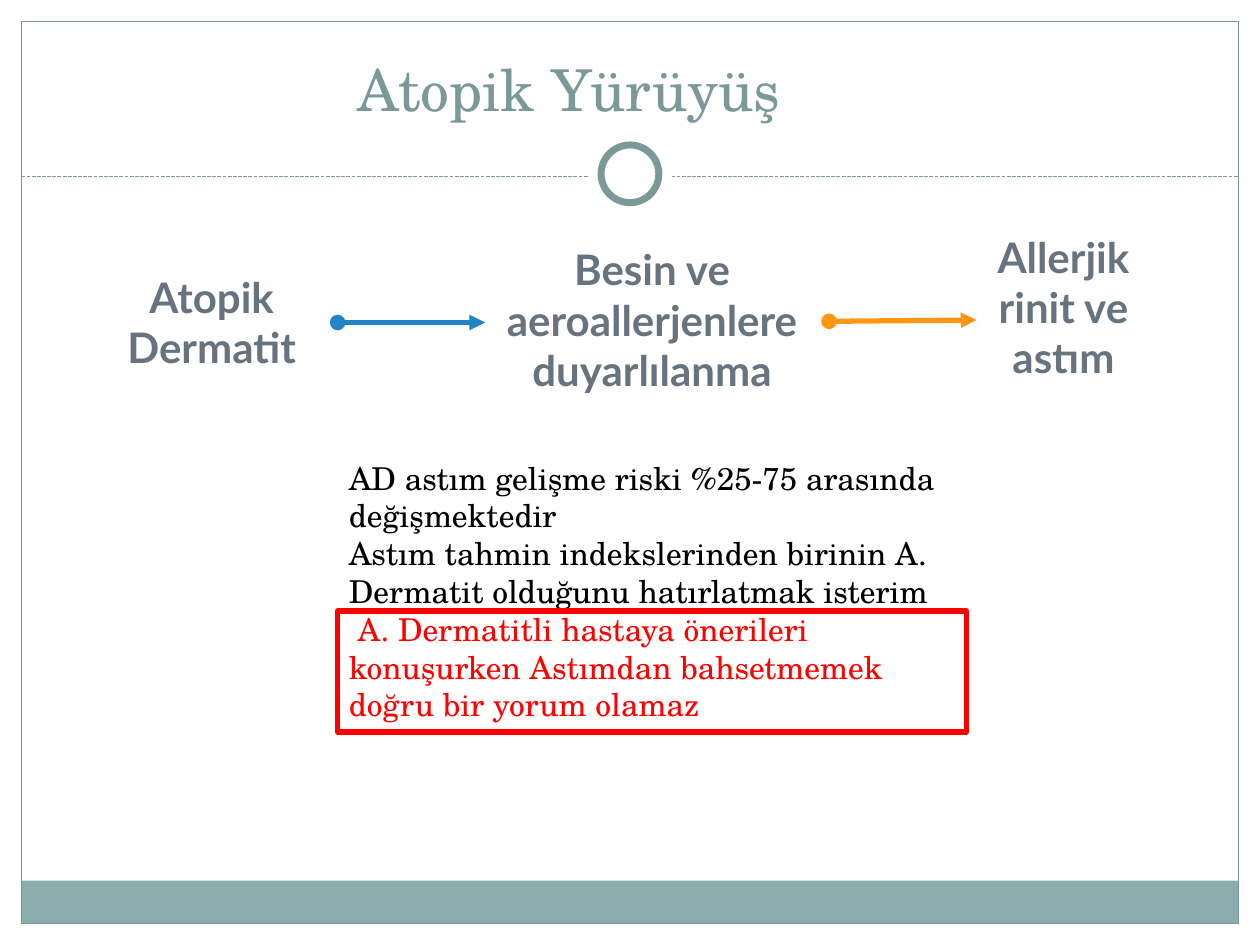
"""Build the Atopik Yürüyüş slide."""
from lxml import etree
from pptx import Presentation
from pptx.dml.color import RGBColor
from pptx.enum.dml import MSO_LINE
from pptx.enum.shapes import MSO_CONNECTOR, MSO_SHAPE
from pptx.enum.text import MSO_ANCHOR, PP_ALIGN
from pptx.oxml.ns import qn
from pptx.util import Pt

RECT, OVAL = MSO_SHAPE.RECTANGLE, MSO_SHAPE.OVAL
STRAIGHT, DASH = MSO_CONNECTOR.STRAIGHT, MSO_LINE.SQUARE_DOT
TOP, MIDDLE, BOTTOM = MSO_ANCHOR.TOP, MSO_ANCHOR.MIDDLE, MSO_ANCHOR.BOTTOM
LEFT, CENTER = PP_ALIGN.LEFT, PP_ALIGN.CENTER

SERIF, SANS = "TeX Gyre Schola", "Lato"
COLORS = {"teal": "7C999A", "band": "8CADAE", "white": "FFFFFF", "slate": "677480",
          "blue": "2185C5", "orange": "FF9715", "black": "000000", "red": "FF0000"}

WIDTH, HEIGHT = 720, 540
MARGIN = 12.24
RULE_Y = 100.8
RING_Y = 99.36

TITLE = "Atopik Yürüyüş"
STAGES = [
    ("Atopik Dermatit", (59.76, 159.12, 122.4, 49.68)),
    ("Besin ve aeroallerjenlere duyarlılanma", (275.04, 157.68, 195.12, 49.68)),
    ("Allerjik rinit ve astım", (556.56, 151.2, 102.24, 48.24)),
]
ARROWS = [
    ("blue", (192.96, 184.32, 277.2, 184.32)),
    ("orange", (473.76, 183.6, 558, 182.88)),
]
NOTES = [
    ("AD astım gelişme riski %25-75 arasında değişmektedir", "black"),
    ("Astım tahmin indekslerinden birinin A. Dermatit olduğunu hatırlatmak isterim", "black"),
    (" A. Dermatitli hastaya önerileri konuşurken Astımdan bahsetmemek doğru bir yorum olamaz", "red"),
]


def rgb(name):
    return RGBColor.from_string(COLORS[name])


def add_shape(s, kind, box, fill=None, line=None, weight=0.75):
    sp = s.shapes.add_shape(kind, *map(Pt, box))
    sp.shadow.inherit = False
    if fill:
        sp.fill.solid()
        sp.fill.fore_color.rgb = rgb(fill)
    else:
        sp.fill.background()
    if line:
        sp.line.color.rgb = rgb(line)
        sp.line.width = Pt(weight)
    else:
        sp.line.fill.background()


def add_circle(s, size, **style):
    add_shape(s, OVAL, ((WIDTH - size) / 2, RING_Y - size / 2, size, size), **style)


def add_line(s, ends, color, weight, dash=None, arrow=False):
    cx = s.shapes.add_connector(STRAIGHT, *map(Pt, ends))
    cx.line.color.rgb = rgb(color)
    cx.line.width = Pt(weight)
    if dash:
        cx.line.dash_style = dash
    if arrow:
        ln = cx.line._get_or_add_ln()
        for tag, kind in (("a:headEnd", "oval"), ("a:tailEnd", "triangle")):
            etree.SubElement(ln, qn(tag), type=kind)
    etree.SubElement(cx._element.spPr, qn("a:effectLst"))


def add_text(s, paragraphs, box, font=SERIF, size=18, bold=False,
             align=LEFT, anchor=TOP, inset=7.2):
    tf = s.shapes.add_textbox(*map(Pt, box)).text_frame
    tf.word_wrap = True
    tf.vertical_anchor = anchor
    tf.margin_left = tf.margin_right = Pt(7.2)
    tf.margin_top = tf.margin_bottom = Pt(inset)
    for i, (text, color) in enumerate(paragraphs):
        p = tf.add_paragraph() if i else tf.paragraphs[0]
        p.alignment = align
        r = p.add_run()
        r.text = text
        r.font.name, r.font.size, r.font.bold = font, Pt(size), bold
        r.font.color.rgb = rgb(color)


def main():
    prs = Presentation()
    prs.slide_width, prs.slide_height = Pt(WIDTH), Pt(HEIGHT)
    s = prs.slides.add_slide(prs.slide_layouts[6])

    inner = WIDTH - 2 * MARGIN
    add_shape(s, RECT, (MARGIN, 503.28, inner, 24.48), fill="band")
    add_shape(s, RECT, (MARGIN, MARGIN, inner, HEIGHT - 2 * MARGIN), line="teal")
    add_line(s, (MARGIN, RULE_Y, WIDTH - MARGIN, RULE_Y), "teal", 0.75, dash=DASH)
    add_circle(s, 48, fill="white")
    add_circle(s, 33, fill="white", line="teal", weight=4)

    add_text(s, [(TITLE, "teal")], (70.56, 20.88, 509.04, 56.88),
             size=33, align=CENTER, anchor=BOTTOM)
    for color, ends in ARROWS:
        add_line(s, ends, color, 3, arrow=True)
    for text, box in STAGES:
        add_text(s, [(text, "slate")], box, font=SANS, size=24, bold=True,
                 align=CENTER, anchor=MIDDLE)
    add_text(s, NOTES, (192.24, 258.48, 360, 159.84), inset=3.6)
    add_shape(s, RECT, (192.96, 349.2, 359.28, 69.12), line="red", weight=3)

    prs.save("out.pptx")


if __name__ == "__main__":
    main()
